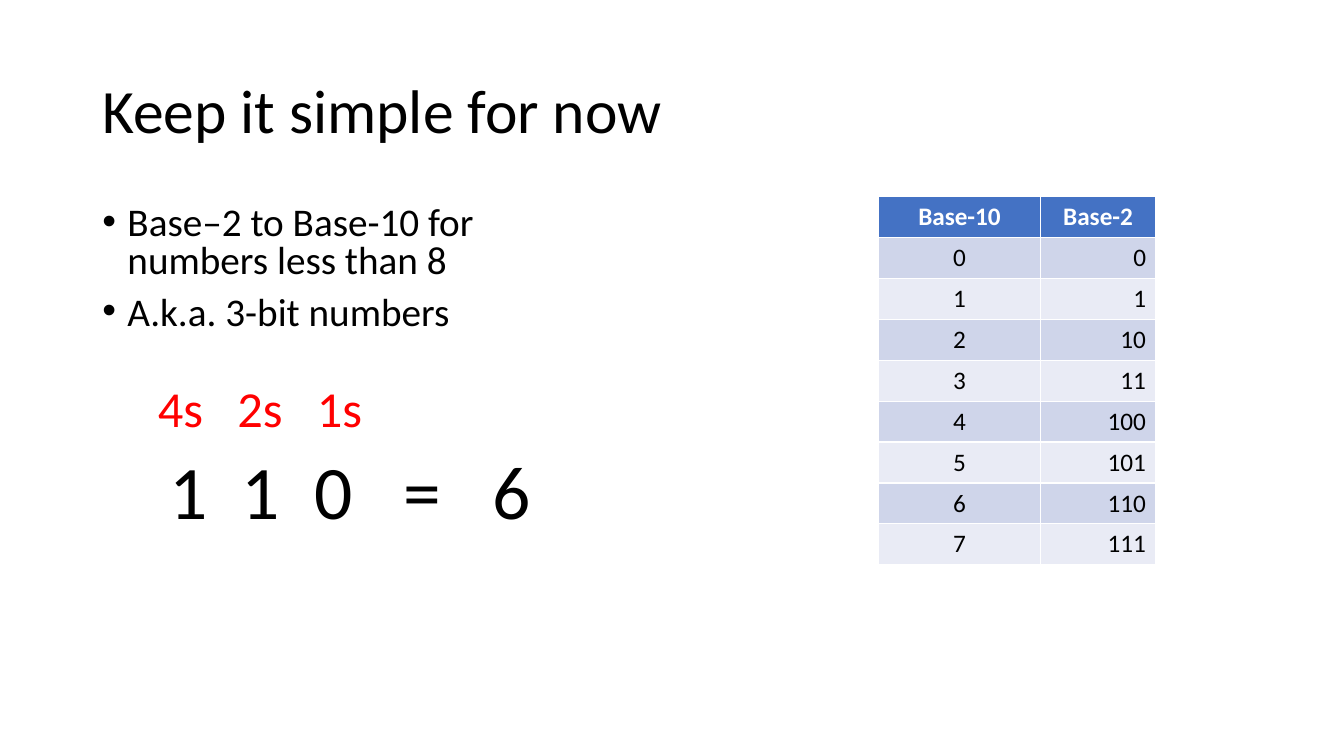
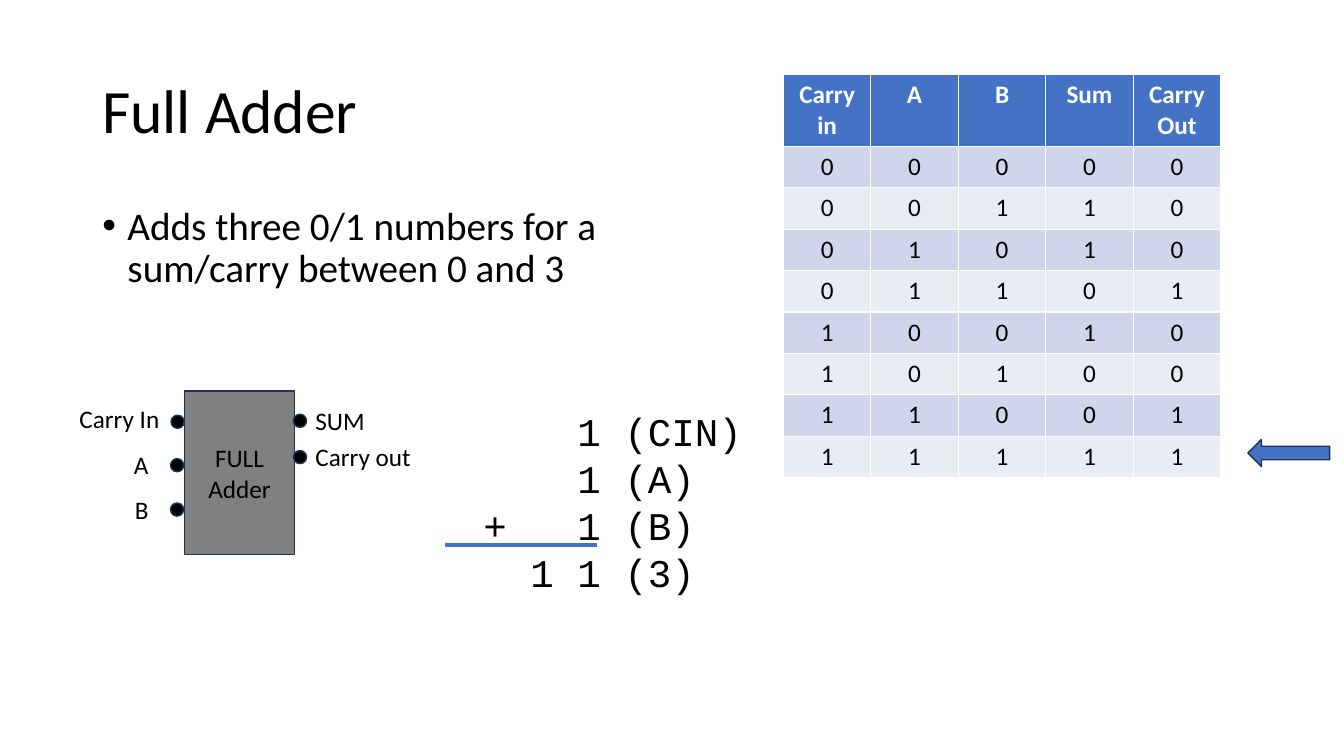
from lxml import etree
from pptx import Presentation
from pptx.dml.color import RGBColor as RGB
from pptx.enum.shapes import MSO_CONNECTOR as CONN, MSO_SHAPE as SHAPE
from pptx.enum.text import MSO_ANCHOR as ANCHOR, PP_ALIGN as ALIGN
from pptx.oxml.ns import qn
from pptx.util import Pt


class Theme:
    font, mono = "Calibri", "Courier New"
    title, body, label = 44, 28, 18
    places, digits = 36, 54
    black, white = RGB(0, 0, 0), RGB(255, 255, 255)
    red, gray = RGB(255, 0, 0), RGB(128, 128, 128)
    accent, outline = RGB(0x44, 0x72, 0xC4), RGB(0x1E, 0x32, 0x56)
    bands = RGB(0xCF, 0xD5, 0xEA), RGB(0xE9, 0xEB, 0xF5)


def add_text(s, box, lines, size, color=Theme.black, font=Theme.font,
             spacing=None, bullet=False, tabs=None, wrap=True, anchor=ANCHOR.TOP):
    tf = s.shapes.add_textbox(*map(Pt, box)).text_frame
    tf.word_wrap, tf.vertical_anchor = wrap, anchor
    for i, line in enumerate(lines):
        p = tf.add_paragraph() if i else tf.paragraphs[0]
        p.text = line
        if spacing:
            p.line_spacing = spacing
        if bullet:
            if i:
                p.space_before = Pt(10)
            pPr = p._p.get_or_add_pPr()
            pPr.set("marL", str(Pt(18)))
            pPr.set("indent", str(-Pt(18)))
            etree.SubElement(pPr, qn("a:buFont"), typeface="Arial")
            etree.SubElement(pPr, qn("a:buChar"), char="•")
        if tabs:
            stops = etree.SubElement(p._p.get_or_add_pPr(), qn("a:tabLst"))
            for pos in tabs[i]:
                etree.SubElement(stops, qn("a:tab"), pos=str(Pt(pos)), algn="l")
        for r in p.runs:
            r.font.name, r.font.size = font, Pt(size)
            r.font.color.rgb = color


def add_grid(s, left, top, widths, heights, rows, aligns):
    box = left, top, sum(widths), sum(heights)
    table = s.shapes.add_table(len(rows), len(widths), *map(Pt, box)).table
    for col, width in zip(table.columns, widths):
        col.width = Pt(width)
    for i, (row, height) in enumerate(zip(rows, heights)):
        table.rows[i].height = Pt(height)
        for j, value in enumerate(row):
            cell = table.cell(i, j)
            cell.fill.solid()
            cell.fill.fore_color.rgb = Theme.bands[(i - 1) % 2] if i else Theme.accent
            p = cell.text_frame.paragraphs[0]
            p.text = str(value)
            p.alignment = aligns[j] if i else ALIGN.CENTER
            f = p.runs[0].font
            f.name, f.size, f.bold = Theme.font, Pt(Theme.label), i == 0
            f.color.rgb = Theme.black if i else Theme.white


prs = Presentation()
prs.slide_width, prs.slide_height = Pt(960), Pt(540)
slides = []
for title in ("Keep it simple for now", "Full Adder"):
    s = prs.slides.add_slide(prs.slide_layouts[6])
    add_text(s, (66, 28.75, 828, 104.4), [title], Theme.title,
             spacing=0.9, anchor=ANCHOR.MIDDLE)
    slides.append(s)
simple, adder = slides

add_text(simple, (66, 144, 343.5, 104.4),
         ["Base–2 to Base-10 for numbers less than 8", "A.k.a. 3-bit numbers"],
         Theme.body, spacing=0.8, bullet=True)
base_rows = [("Base-10", "Base-2")] + [(n, f"{n:b}") for n in range(8)]
add_grid(simple, 627.8, 140.6, (115.2, 82.8), [29.2] * 9, base_rows,
         (ALIGN.CENTER, ALIGN.RIGHT))
add_text(simple, (113.8, 313.2, 290, 72.7), ["1\t1\t0\t=\t6"], Theme.digits,
         tabs=[(51.8, 103.6, 167.6, 231.1)])
add_text(simple, (105.8, 265.7, 175, 50.9), ["4s\t2s\t1s"], Theme.places, Theme.red,
         tabs=[(56.7, 113.4)])

add_text(adder, (66, 144, 450.7, 69.1),
         ["Adds three 0/1 numbers for a sum/carry between 0 and 3"],
         Theme.body, spacing=0.9, bullet=True)
truth_rows = [("Carry in", "A", "B", "Sum", "Carry Out"), "00000", "00110", "01010",
              "01101", "10010", "10100", "11001", "11111"]
add_grid(adder, 559.6, 53.4, [62.5] * 5, [51.1] + [29.6] * 8, truth_rows,
         [ALIGN.CENTER] * 5)

mono_step = 0.6 * Theme.body
add_text(adder, (304.6, 287.3, 249.1, 143.3),
         ["\t1 (CIN)", "\t1 (A)", "\t+\t1 (B)", "\t1 1 (3)"], Theme.body, font=Theme.mono,
         tabs=[[n * mono_step for n in cols] for cols in ((6,), (6,), (2, 6), (4,))])
sum_line = adder.shapes.add_connector(CONN.STRAIGHT, Pt(318.2), Pt(389.5),
                                      Pt(426.2), Pt(389.5))
sum_line.line.color.rgb, sum_line.line.width = Theme.accent, Pt(3)
etree.SubElement(sum_line._element.spPr, qn("a:effectLst"))

dot = 9.4
ports = [
    (122.2, 296.6, "Carry In", 49.7, 284.4, 72),
    (121.8, 327.6, "A", 88.6, 317.5, 25.2),
    (121.8, 359.3, "B", 89.3, 349.2, 25.2),
    (209.6, 295.9, "SUM", 218.2, 285.8, 49.7),
    (209.6, 321.8, "Carry out", 218.2, 311.8, 83.5),
]
solids = [
    (SHAPE.LEFT_ARROW, (891.4, 313.9, 58.3, 19.4), Theme.accent, ""),
    (SHAPE.RECTANGLE, (131.8, 279.4, 78.5, 116.6), Theme.gray, "FULL\nAdder"),
]
solids += [(SHAPE.OVAL, (x, y, dot, dot), Theme.black, "") for x, y, *_ in ports]
for kind, box, fill, text in solids:
    sp = adder.shapes.add_shape(kind, *map(Pt, box))
    sp.shadow.inherit = False
    sp.fill.solid()
    sp.fill.fore_color.rgb = fill
    sp.line.color.rgb, sp.line.width = Theme.outline, Pt(1)
    if text:
        tf = sp.text_frame
        tf.text, tf.vertical_anchor = text, ANCHOR.MIDDLE
        for p in tf.paragraphs:
            p.alignment = ALIGN.CENTER
            f = p.runs[0].font
            f.name, f.size, f.color.rgb = Theme.font, Pt(Theme.label), Theme.black
for *_, label, left, top, width in ports:
    add_text(adder, (left, top, width, 29), [label], Theme.label, wrap=False)

prs.save("out.pptx")
